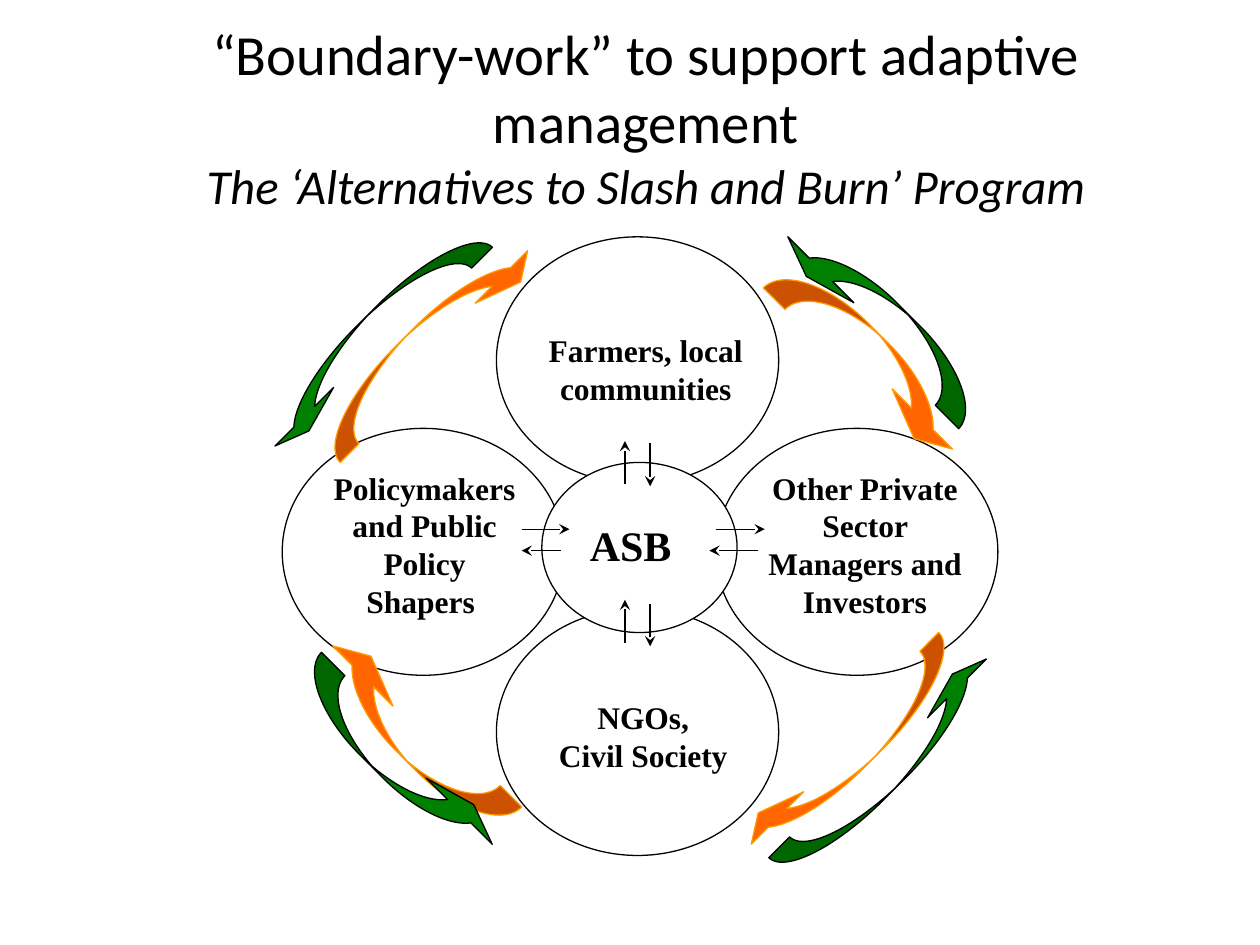
from lxml import etree
from pptx import Presentation
from pptx.dml.color import RGBColor
from pptx.enum.shapes import MSO_CONNECTOR, MSO_SHAPE
from pptx.enum.text import MSO_ANCHOR, PP_ALIGN
from pptx.oxml.ns import qn
from pptx.util import Inches, Pt

BLACK, WHITE = "000000", "FFFFFF"
SERIF = "Times New Roman"

TITLE = "“Boundary-work” to support adaptive management"
SUBTITLE = "The ‘Alternatives to Slash and Burn’ Program"

# left, top, width, height
CIRCLES = [
    (3.94, 4.83, 2.24, 1.96),  # NGOs
    (5.68, 3.4, 2.24, 1.96),   # private sector
    (3.94, 1.88, 2.24, 1.96),  # farmers
    (2.24, 3.4, 2.24, 1.96),   # policymakers
    (4.3, 3.67, 1.55, 1.35),   # ASB hub
]

# paragraphs, box, size, anchor
LABELS = [
    (["Other Private Sector Managers and Investors"], (5.99, 3.67, 1.75, 1.42), 18, MSO_ANCHOR.TOP),
    (["Policymakers and Public Policy Shapers "], (2.5, 3.67, 1.74, 1.5), 18, MSO_ANCHOR.TOP),
    (["Farmers, local communities"], (4.24, 2.58, 1.77, 0.68), 18, MSO_ANCHOR.TOP),
    (["ASB"], (4.17, 3.99, 1.67, 0.66), 24, MSO_ANCHOR.MIDDLE),
    (["NGOs,", "Civil Society"], (4.33, 5.49, 1.55, 0.84), 18, MSO_ANCHOR.TOP),
]

# x and y of the start, x and y of the pointed end
EXCHANGES = [
    (5.68, 4.2, 6.07, 4.2), (6.02, 4.37, 5.63, 4.37),
    (4.14, 4.2, 4.52, 4.2), (4.45, 4.37, 4.14, 4.37),
    (4.96, 3.84, 4.96, 3.5), (5.16, 3.52, 5.16, 3.86),
    (4.96, 5.1, 4.96, 4.76), (5.16, 4.79, 5.16, 5.13),
]

# kind, adjustments, fill, line, boxes each turned 90 degrees on from 45
CYCLES = [
    (MSO_SHAPE.CURVED_DOWN_ARROW, (0.62, 1.73, 0.4), "FF6600", "FF9900",
     [(5.9, 2.67, 2.03, 0.39), (5.59, 5.79, 2.32, 0.34),
      (2.27, 5.63, 2.03, 0.39), (2.24, 2.56, 2.32, 0.34)]),
    (MSO_SHAPE.CURVED_RIGHT_ARROW, (0.73, 2.06, 0.33), "008000", BLACK,
     [(2.79, 1.5, 0.32, 2.39), (6.82, 1.5, 0.36, 2.08),
      (6.9, 4.88, 0.32, 2.39), (2.98, 5, 0.36, 2.08)]),
]


def rgb(value):
    return RGBColor.from_string(value)


def add_shape(slide, kind, box, fill, line):
    sp = slide.shapes.add_shape(kind, *map(Inches, box))
    sp.shadow.inherit = False
    sp.fill.solid()
    sp.fill.fore_color.rgb = rgb(fill)
    sp.line.color.rgb = rgb(line)
    sp.line.width = Pt(0.75)
    return sp


def add_text_frame(slide, box, anchor):
    tf = slide.shapes.add_textbox(*map(Inches, box)).text_frame
    tf.word_wrap = True
    tf.vertical_anchor = anchor
    return tf


def add_run(p, text, size, name, bold=False, italic=False):
    p.alignment = PP_ALIGN.CENTER
    r = p.add_run()
    r.text = text
    font = r.font
    font.size, font.name, font.bold, font.italic = Pt(size), name, bold, italic
    font.color.rgb = rgb(BLACK)


def add_arrow(slide, ends):
    line = slide.shapes.add_connector(MSO_CONNECTOR.STRAIGHT, *map(Inches, ends))
    line.line.color.rgb = rgb(BLACK)
    line.line.width = Pt(0.75)
    etree.SubElement(line.line._get_or_add_ln(), qn("a:tailEnd"), type="stealth")
    etree.SubElement(line._element.spPr, qn("a:effectLst"))


def main():
    prs = Presentation()
    prs.slide_width, prs.slide_height = Inches(10), Inches(7.5)
    slide = prs.slides.add_slide(prs.slide_layouts[6])

    tf = add_text_frame(slide, (0.33, 0.3, 9.59, 1.25), MSO_ANCHOR.MIDDLE)
    tf.margin_left = tf.margin_right = Inches(0.2)
    p = tf.paragraphs[0]
    add_run(p, TITLE, 32.4, "Calibri")
    p.add_line_break()
    add_run(p, SUBTITLE, 27.9, "Calibri", italic=True)

    for box in CIRCLES:
        add_shape(slide, MSO_SHAPE.OVAL, box, WHITE, BLACK)

    for paragraphs, box, size, anchor in LABELS:
        tf = add_text_frame(slide, box, anchor)
        for i, text in enumerate(paragraphs):
            p = tf.add_paragraph() if i else tf.paragraphs[0]
            add_run(p, text, size, SERIF, bold=True)

    for ends in EXCHANGES:
        add_arrow(slide, ends)

    for kind, adjustments, fill, line, boxes in CYCLES:
        for turn, box in enumerate(boxes):
            sp = add_shape(slide, kind, box, fill, line)
            sp.rotation = 45 + 90 * turn
            for i, value in enumerate(adjustments):
                sp.adjustments[i] = value

    prs.save("out.pptx")


if __name__ == "__main__":
    main()
